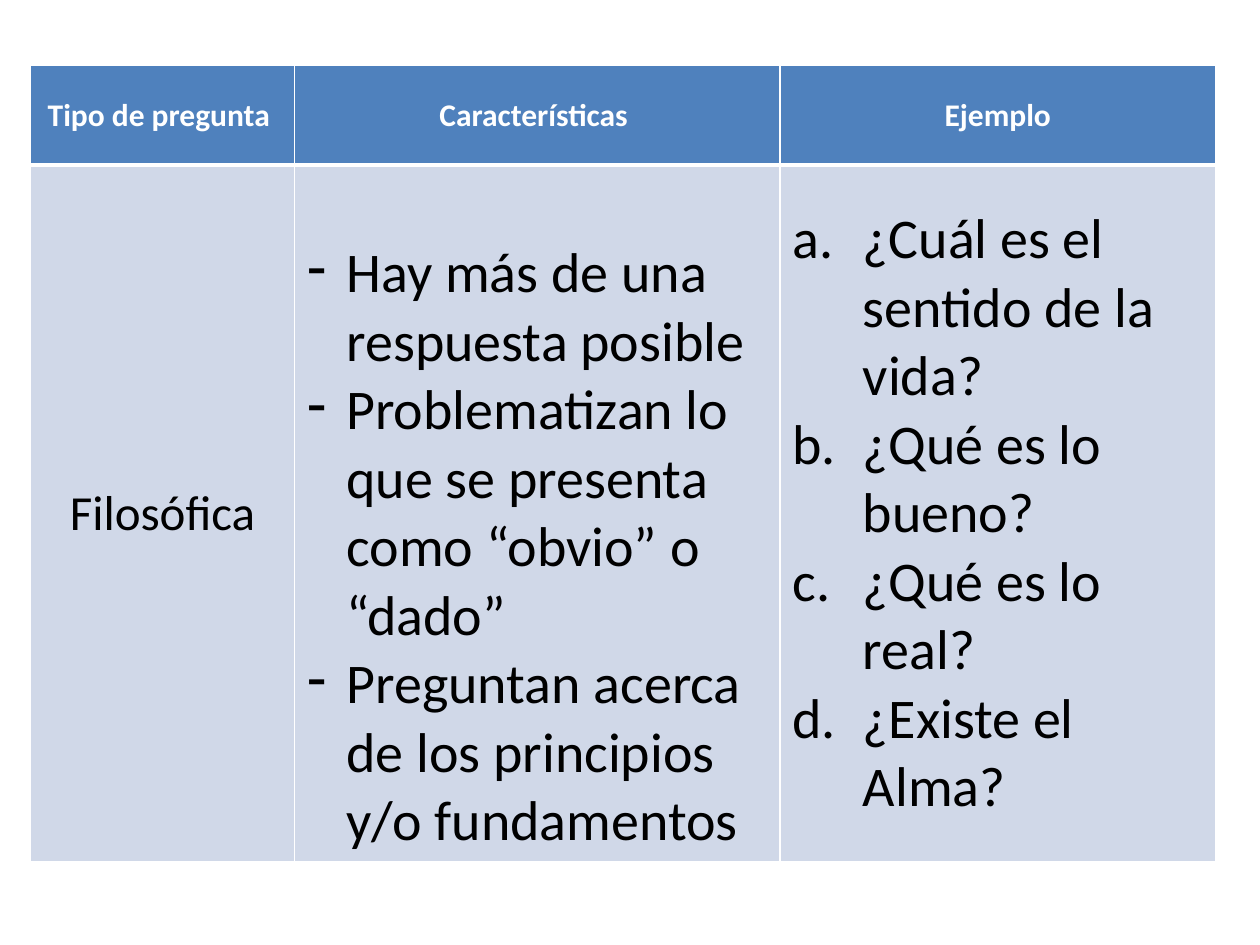
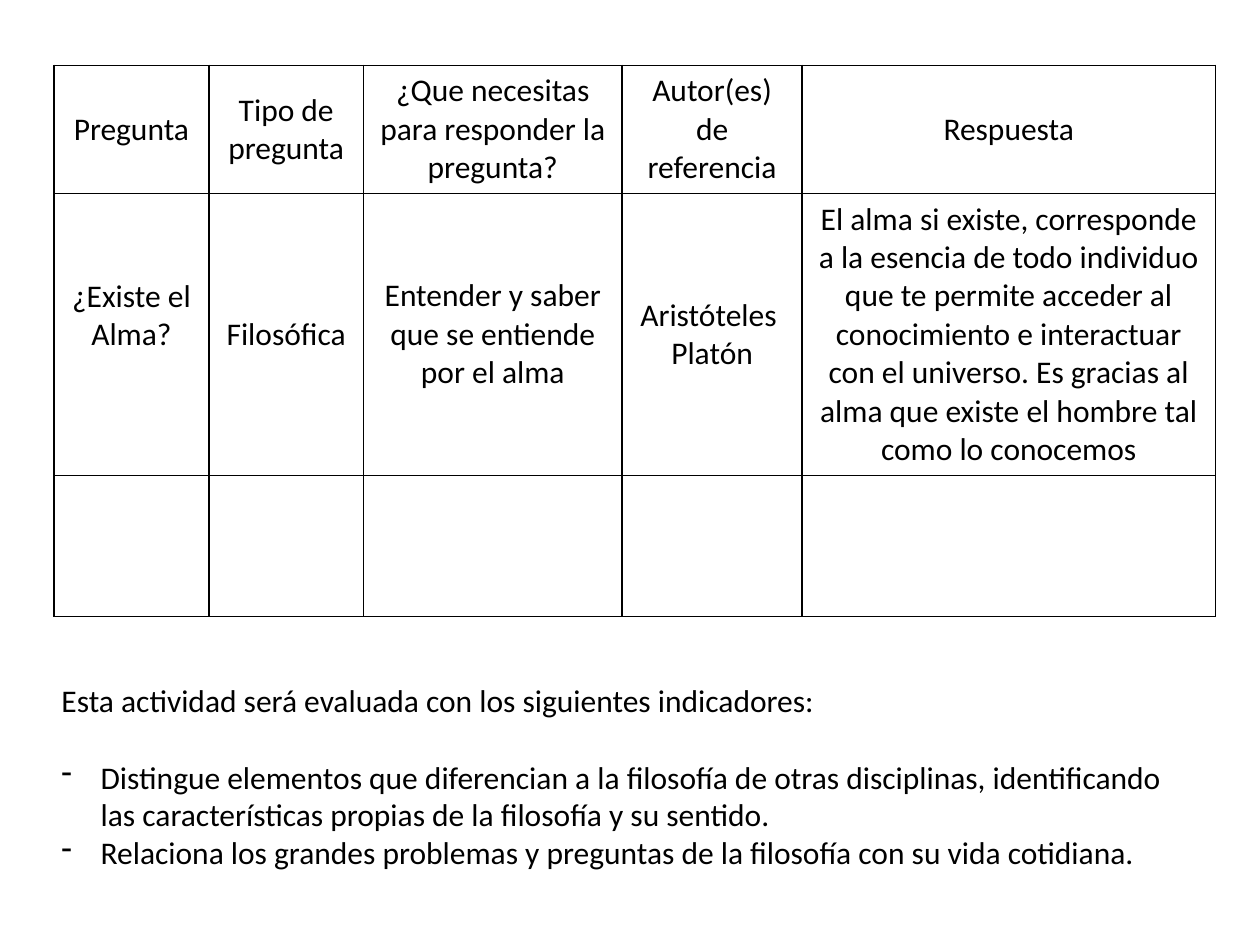
from dataclasses import dataclass

import pptx
import pptx.dml.color
import pptx.enum.text
import pptx.oxml.ns
import pptx.util
from lxml import etree

Cm = pptx.util.Cm
Pt = pptx.util.Pt
CENTER = pptx.enum.text.PP_ALIGN.CENTER
LEFT = pptx.enum.text.PP_ALIGN.LEFT
qn = pptx.oxml.ns.qn


@dataclass(frozen=True)
class Theme:
    font: str = "Calibri"
    white: str = "FFFFFF"
    black: str = "000000"
    header: str = "4F81BD"
    body: str = "D0D8E8"
    small: int = 18
    medium: int = 28
    large: int = 32


theme = Theme()


def add_text(tf, lines, size, color=theme.black, bold=False, align=LEFT,
             bullet=None, indent=0):
    """Append one paragraph per line; bullet is (tag, attribute, value)."""
    for line in lines:
        p = tf.paragraphs[-1]
        if p.runs:
            p = tf.add_paragraph()
        p.alignment = align
        if bullet:
            tag, key, value = bullet
            pPr = p._p.get_or_add_pPr()
            pPr.set("marL", str(Cm(indent)))
            pPr.set("indent", str(-Cm(indent)))
            etree.SubElement(pPr, qn(tag)).set(key, value)
        r = p.add_run()
        r.text = line
        r.font.name = theme.font
        r.font.size = Pt(size)
        r.font.bold = bold
        r.font.color.rgb = pptx.dml.color.RGBColor.from_string(color)


def add_grid(s, left, top, widths, heights, fills, line, header_rule):
    """Add a table with one fill per row, ruled lines and centred anchors."""
    tbl = s.shapes.add_table(len(heights), len(widths), Cm(left), Cm(top),
                             Cm(sum(widths)), Cm(sum(heights))).table
    tbl.first_row = tbl.horz_banding = False
    for col, width in zip(tbl.columns, widths):
        col.width = Cm(width)
    for i, (row, height, fill) in enumerate(zip(tbl.rows, heights, fills)):
        row.height = Cm(height)
        for cell in row.cells:
            cell.vertical_anchor = pptx.enum.text.MSO_ANCHOR.MIDDLE
            if fill:
                cell.fill.solid()
                cell.fill.fore_color.rgb = pptx.dml.color.RGBColor.from_string(fill)
            else:
                cell.fill.background()
            # Borders come before the fill in the cell properties
            tcPr = cell._tc.get_or_add_tcPr()
            for n, side in enumerate(("a:lnL", "a:lnR", "a:lnT", "a:lnB")):
                under_header = (i, side) in ((0, "a:lnB"), (1, "a:lnT"))
                ln = etree.Element(qn(side))
                ln.set("w", str(Pt(header_rule if under_header else 1)))
                solid = etree.SubElement(ln, qn("a:solidFill"))
                etree.SubElement(solid, qn("a:srgbClr")).set("val", line)
                tcPr.insert(n, ln)
    return tbl


dash = ("a:buChar", "char", "-")
letters = ("a:buAutoNum", "type", "alphaLcPeriod")

prs = pptx.Presentation()
prs.slide_width = Cm(25.4)
prs.slide_height = Cm(19.05)
blank = prs.slide_layouts[6]

# Slide 1: traits and examples of philosophical questions
s = prs.slides.add_slide(blank)
tbl = add_grid(s, 0.61, 1.32, [5.33, 9.78, 8.79], [2.01, 14.05],
               [theme.header, theme.body], theme.white, 3)
for c, title in enumerate(["Tipo de pregunta ", "Características ", "Ejemplo"]):
    add_text(tbl.cell(0, c).text_frame, [title], theme.small, theme.white,
             True, CENTER)

add_text(tbl.cell(1, 0).text_frame, ["Filosófica"], theme.medium, align=CENTER)
traits = [
    "Hay más de una respuesta posible",
    "Problematizan lo que se presenta como “obvio” o “dado”",
    "Preguntan acerca de los principios y/o fundamentos",
]
tbl.cell(1, 1).margin_top = Cm(1.5)
add_text(tbl.cell(1, 1).text_frame, traits, theme.large, bullet=dash, indent=0.79)
examples = [
    "¿Cuál es el sentido de la vida?",
    "¿Qué es lo bueno?",
    "¿Qué es lo real?",
    "¿Existe el Alma?",
]
add_text(tbl.cell(1, 2).text_frame, examples, theme.large, bullet=letters,
         indent=1.42)

# Slide 2: activity table with an empty row to fill in
s = prs.slides.add_slide(blank)
tbl = add_grid(s, 1.09, 1.32, [3.12, 3.12, 5.21, 3.63, 8.33],
               [2.57, 5.69, 2.84], [None] * 3, theme.black, 1)
rows = [
    [["Pregunta"], ["Tipo de pregunta"],
     ["¿Que necesitas para responder la pregunta?"],
     ["Autor(es) de referencia"], ["Respuesta"]],
    [["¿Existe el Alma?"], ["Filosófica"],
     ["Entender y saber que se entiende por el alma"],
     ["Aristóteles ", "Platón"],
     ["El alma si existe, corresponde a la esencia de todo individuo que te "
      "permite acceder al conocimiento e interactuar con el universo. Es "
      "gracias al alma que existe el hombre tal como lo conocemos"]],
]
for i, row in enumerate(rows):
    for c, lines in enumerate(row):
        add_text(tbl.cell(i, c).text_frame, lines, theme.small, align=CENTER)
# The sample question sits above the middle of its row
tbl.cell(1, 0).margin_bottom = Cm(0.9)

# Assessment criteria
sp = s.shapes.add_textbox(Cm(0.99), Cm(13.61), Cm(23.39), Cm(4.11))
tf = sp.text_frame
tf.word_wrap = True
tf.auto_size = pptx.enum.text.MSO_AUTO_SIZE.SHAPE_TO_FIT_TEXT
add_text(tf, ["Esta actividad será evaluada con los siguientes indicadores:"],
         theme.small)
tf.paragraphs[0].space_after = Pt(22)
criteria = [
    "Distingue elementos que diferencian a la filosofía de otras disciplinas, "
    "identificando las características propias de la filosofía y su sentido.",
    "Relaciona los grandes problemas y preguntas de la filosofía con su vida "
    "cotidiana.",
]
add_text(tf, criteria, theme.small, bullet=dash, indent=0.79)

prs.save("out.pptx")
